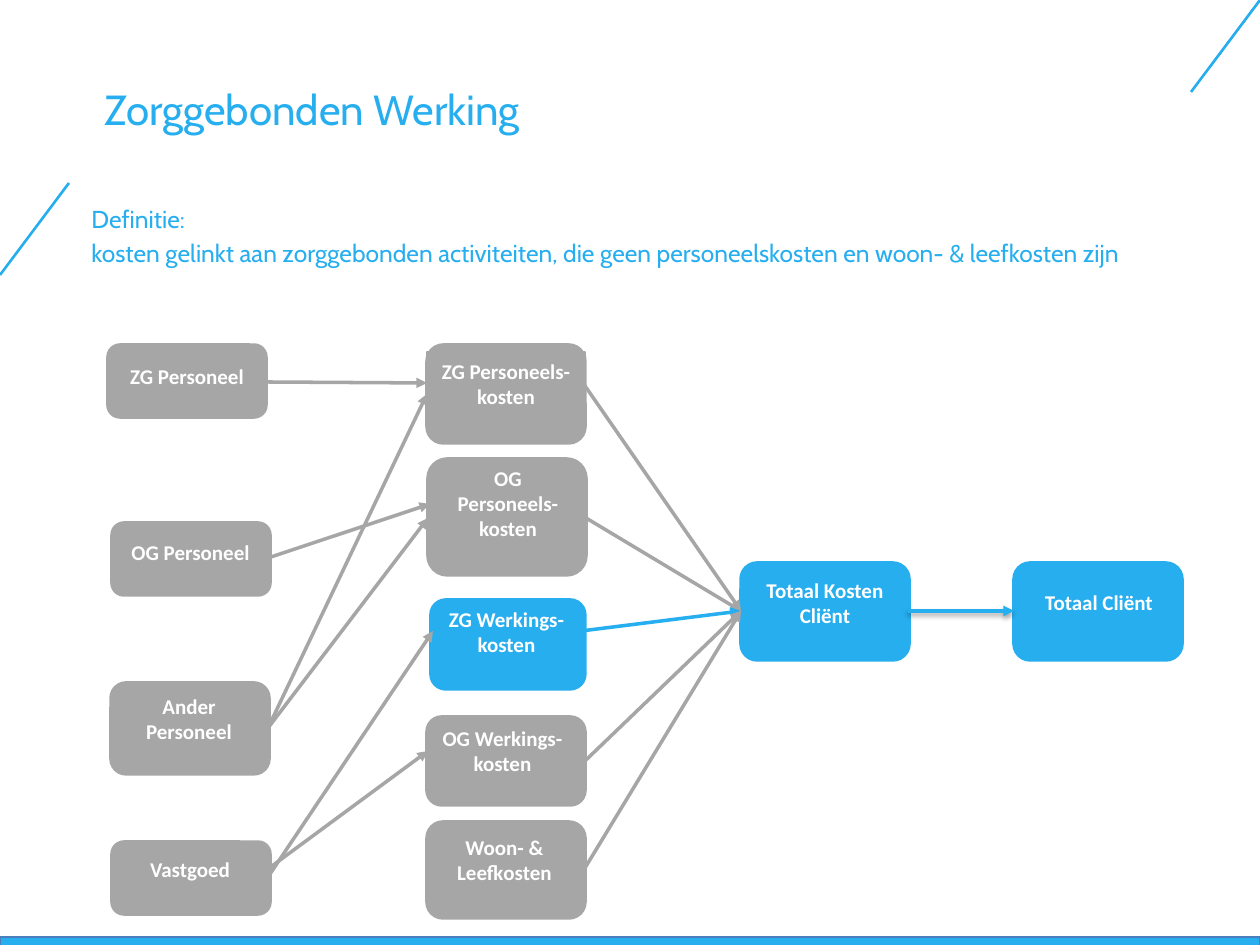
from lxml import etree
from pptx import Presentation
from pptx.dml.color import RGBColor
from pptx.enum.shapes import MSO_CONNECTOR, MSO_SHAPE
from pptx.enum.text import MSO_ANCHOR, MSO_AUTO_SIZE, PP_ALIGN
from pptx.oxml.ns import qn
from pptx.util import Emu, Pt

STRAIGHT = MSO_CONNECTOR.STRAIGHT
RECTANGLE, ROUNDED = MSO_SHAPE.RECTANGLE, MSO_SHAPE.ROUNDED_RECTANGLE
CENTER, LEFT = PP_ALIGN.CENTER, PP_ALIGN.LEFT
TOP = MSO_ANCHOR.TOP
GROW, FIXED = MSO_AUTO_SIZE.SHAPE_TO_FIT_TEXT, MSO_AUTO_SIZE.NONE

BLUE, GRAY, WHITE, EDGE = "27AEEF", "A6A6A6", "FFFFFF", "4B7EBC"

# label, colour, box, label box, whether the label has its own fill
NODES = [
    ("ZG Personeel", GRAY, (108, 345, 158, 72), (108, 357, 158, 38), True),
    ("OG Personeel", GRAY, (112, 523, 158, 72), (113, 533, 155, 38), False),
    ("Ander Personeel", GRAY, (111, 683, 158, 91), (112, 687, 154, 63), False),
    ("Vastgoed", GRAY, (112, 842, 158, 72), (111, 850, 158, 38), False),
    ("ZG Personeels-kosten", GRAY, (427, 345, 158, 98), (427, 352, 158, 63), True),
    ("OG Personeels-kosten", GRAY, (428, 459, 158, 116), (430, 459, 156, 89), False),
    ("ZG Werkings-kosten", BLUE, (431, 600, 154, 89), (433, 600, 147, 63), False),
    ("OG Werkings-kosten", GRAY, (427, 717, 158, 88), (428, 719, 149, 63), False),
    ("Woon- & Leefkosten", GRAY, (427, 822, 158, 96), (431, 828, 147, 63), False),
    ("Totaal Kosten Cliënt", BLUE, (741, 563, 168, 97), (742, 571, 166, 63), False),
    ("Totaal Cliënt", BLUE, (1014, 563, 168, 97), (1016, 583, 166, 38), False),
]

STAFF_ARROWS = [
    ((266, 382), (427, 383)),
    ((268, 558), (430, 504)),
    ((268, 728), (428, 518)),
    ((268, 728), (427, 394)),
    ((268, 869), (428, 751)),
    ((268, 877), (433, 631)),
]
TOTAL_ENTRY = (741, 611)
COST_EXITS = [
    ((586, 518), GRAY),
    ((581, 631), BLUE),
    ((585, 761), GRAY),
    ((585, 868), GRAY),
    ((583, 383), GRAY),
]


def px(length):
    return Emu(round(length * 914400 / 126))


def color(hex_string):
    return RGBColor.from_string(hex_string)


class FlowSlide:
    """Draws the elements of the cost diagram on one slide."""

    heading_font = "Cabin"
    label_font = "Calibri"

    def __init__(self, slide):
        self.slide = slide

    def box(self, kind, place, fill, line, line_width):
        shape = self.slide.shapes.add_shape(kind, *map(px, place))
        shape.shadow.inherit = False
        shape.fill.solid()
        shape.fill.fore_color.rgb = color(fill)
        shape.line.color.rgb = color(line)
        shape.line.width = Pt(line_width)
        return shape

    def fill_text(self, shape, lines, font_name, size, text_color, bold, align, autosize):
        frame = shape.text_frame
        frame.word_wrap = True
        frame.auto_size = autosize
        frame.vertical_anchor = TOP
        for index, line in enumerate(lines):
            paragraph = frame.add_paragraph() if index else frame.paragraphs[0]
            paragraph.alignment = align
            if index:
                paragraph.space_before = Pt(size * 0.2)
            run = paragraph.add_run()
            run.text = line
            run.font.name = font_name
            run.font.size = Pt(size)
            run.font.bold = bold
            run.font.color.rgb = color(text_color)

    def heading(self, place, lines, size, inset_top=6):
        shape = self.slide.shapes.add_textbox(*map(px, place))
        shape.text_frame.margin_top = px(inset_top)
        self.fill_text(shape, lines, self.heading_font, size, BLUE, False, LEFT, FIXED)

    def node(self, label, fill, place, label_place, filled_label):
        self.box(ROUNDED, place, fill, fill, 2)
        if filled_label:
            shape = self.box(RECTANGLE, label_place, fill, fill, 0.75)
        else:
            shape = self.slide.shapes.add_textbox(*map(px, label_place))
        self.fill_text(shape, [label], self.label_font, 12, WHITE, True, CENTER, GROW)

    def line(self, start, end, line_color, width):
        connector = self.slide.shapes.add_connector(STRAIGHT, *map(px, start + end))
        connector.line.color.rgb = color(line_color)
        connector.line.width = Pt(width)
        etree.SubElement(connector._element.spPr, qn("a:effectLst"))
        return connector

    def arrow(self, start, end, line_color):
        connector = self.line(start, end, line_color, 2)
        line_element = connector._element.spPr.find(qn("a:ln"))
        etree.SubElement(line_element, qn("a:tailEnd"), type="triangle")
        return connector

    def shadowed_arrow(self, start, end, line_color):
        connector = self.arrow(start, end, line_color)
        effects = connector._element.spPr.find(qn("a:effectLst"))
        shadow = etree.SubElement(
            effects, qn("a:outerShdw"), blurRad=str(int(Pt(3.1))), dist=str(int(Pt(1.6))),
            dir="5400000", rotWithShape="0")
        black = etree.SubElement(shadow, qn("a:srgbClr"), val="000000")
        etree.SubElement(black, qn("a:alpha"), val="38000")


def main():
    presentation = Presentation()
    presentation.slide_width, presentation.slide_height = px(1260), px(945)
    flow = FlowSlide(presentation.slides.add_slide(presentation.slide_layouts[6]))

    flow.box(RECTANGLE, (0, 937, 1260, 9), BLUE, EDGE, 0.75)
    flow.line((69, 183), (0, 275), BLUE, 1.5)
    flow.line((1260, 0), (1191, 92), BLUE, 1.5)
    flow.heading((92, 77, 1144, 79), ["Zorggebonden Werking"], 24)
    flow.heading((79, 159, 1145, 517), [
        "Definitie:",
        "kosten gelinkt aan zorggebonden activiteiten, "
        "die geen personeelskosten en woon- & leefkosten zijn",
    ], 14, inset_top=45)

    for node in NODES:
        flow.node(*node)
    for start, end in STAFF_ARROWS:
        flow.arrow(start, end, GRAY)
    for start, line_color in COST_EXITS:
        flow.arrow(start, TOTAL_ENTRY, line_color)
    flow.shadowed_arrow((908, 611), (1014, 611), BLUE)

    presentation.save("out.pptx")


if __name__ == "__main__":
    main()
